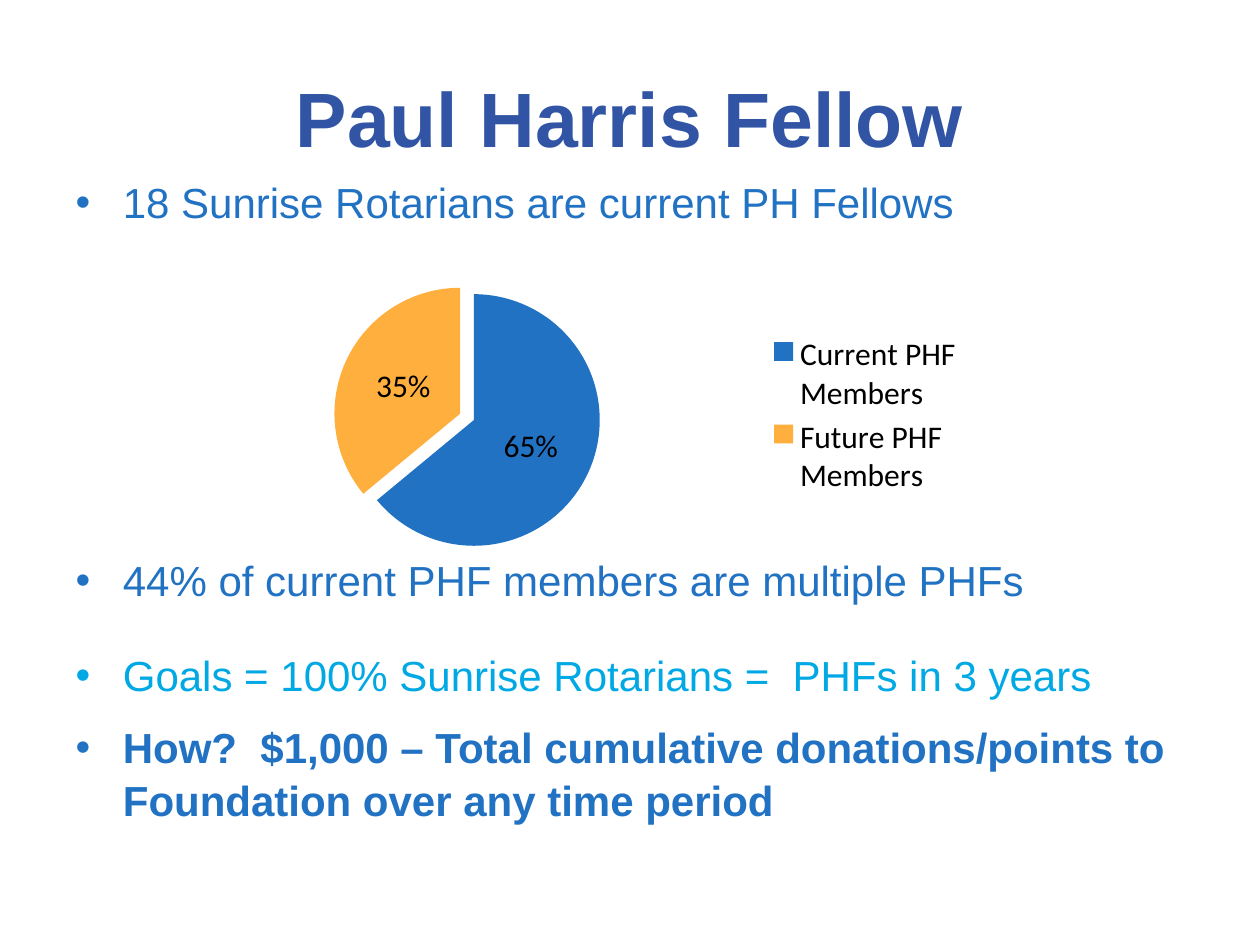
from pptx import Presentation, util as u
from pptx.chart.data import CategoryChartData
from pptx.dml.color import RGBColor
from pptx.enum import chart as ch, text as tx
from pptx.oxml import parse_xml
from pptx.oxml.ns import nsdecls

# Theme
THEME = dict(
    title="3155A4", blue="2172C3", cyan="00A8E4", gold="FFAF3E", ink="000000",
    head="Arial", data="Calibri", big=44, body=24, small=18)

# Content
TITLE = "Paul Harris Fellow"
# text, colour, bold, space before, space after (points)
ITEMS = [
    ("18 Sunrise Rotarians are current PH Fellows", "blue", False, 0, 0),
    # the wide gap leaves room for the chart
    ("44% of current PHF members are multiple PHFs", "blue", False, 186, 6),
    ("Goals = 100% Sunrise Rotarians =  PHFs in 3 years", "cyan", False, 18, 6),
    ("How?  $1,000 – Total cumulative donations/points to Foundation "
     "over any time period", "blue", True, 5, 0),
]
# category, value, label, colour
SLICES = [
    ("Current PHF Members", 64, "65%", "blue"),
    ("Future PHF Members", 36, "35%", "gold"),
]

# Places in inches: left, top, width, height
BOXES = dict(title=(0.5, 0.3, 9, 1.25), body=(0.5, 1.33, 9.33, 4.95),
             chart=(2.25, 1.92, 5.5, 2.75))
PLOT = dict(x=0.07, y=0.12, w=0.39, h=0.77)  # shares of the chart


def place(shape, name):
    shape.left, shape.top, shape.width, shape.height = map(u.Inches, BOXES[name])


def style(font, face, size, color, bold=False):
    font.name, font.size, font.bold = THEME[face], u.Pt(THEME[size]), bold
    font.color.rgb = RGBColor.from_string(THEME[color])


def add_text(slide):
    title, body = slide.placeholders
    place(title, "title")
    title.text = TITLE
    title.text_frame.vertical_anchor = tx.MSO_ANCHOR.MIDDLE
    para = title.text_frame.paragraphs[0]
    para.alignment = tx.PP_ALIGN.CENTER
    style(para.font, "head", "big", "title", True)

    place(body, "body")
    frame = body.text_frame
    frame.auto_size = tx.MSO_AUTO_SIZE.NONE
    frame.text = "\n".join(item[0] for item in ITEMS)
    for para, (_, color, bold, before, after) in zip(frame.paragraphs, ITEMS):
        para.line_spacing = 1.05
        para.space_before, para.space_after = u.Pt(before), u.Pt(after)
        style(para.font, "head", "body", color, bold)


def add_pie(slide):
    data = CategoryChartData()
    data.categories = [part[0] for part in SLICES]
    data.add_series("Series 1", [part[1] for part in SLICES])
    box = map(u.Inches, BOXES["chart"])
    pie = slide.shapes.add_chart(ch.XL_CHART_TYPE.PIE, *box, data).chart
    style(pie.font, "data", "small", "ink")
    pie.has_title = False
    pie.has_legend = True
    pie.legend.position = ch.XL_LEGEND_POSITION.RIGHT
    pie.legend.include_in_layout = False

    # Slices and their labels
    plot = pie.plots[0]
    plot.vary_by_categories = True
    series = plot.series[0]
    labels = series.data_labels
    labels.show_percentage, labels.show_value = True, False
    labels.position = ch.XL_LABEL_POSITION.CENTER
    for i, (_, _, label, color) in enumerate(SLICES):
        point = series.points[i]
        point.format.fill.solid()
        point.format.fill.fore_color.rgb = RGBColor.from_string(THEME[color])
        para = point.data_label.text_frame.paragraphs[0]
        run = para.add_run()
        run.text = label
        style(run.font, "data", "small", "ink")
        point.data_label.position = ch.XL_LABEL_POSITION.CENTER

    # Pull the slices apart
    series.format.fill.background()
    look = series.format.fill._xPr
    look.addnext(parse_xml(f'<c:explosion {nsdecls("c")} val="6"/>'))
    for dot in look.getparent().findall("{*}dPt"):
        dot.find("{*}spPr").addprevious(
            parse_xml(f'<c:explosion {nsdecls("c")} val="6"/>'))

    # Fix the plot area
    area = plot._element.getparent()
    for old in area.findall("{*}layout"):
        area.remove(old)
    sizes = "".join(f'<c:{k} val="{v}"/>' for k, v in PLOT.items())
    area.insert(0, parse_xml(
        f'<c:layout {nsdecls("c")}><c:manualLayout><c:layoutTarget val="inner"/>'
        f'<c:xMode val="edge"/><c:yMode val="edge"/>{sizes}'
        '</c:manualLayout></c:layout>'))


def main():
    deck = Presentation()
    deck.slide_width, deck.slide_height = u.Inches(10), u.Inches(7.5)
    slide = deck.slides.add_slide(deck.slide_layouts[1])
    add_text(slide)
    add_pie(slide)
    deck.save("out.pptx")


if __name__ == "__main__":
    main()
